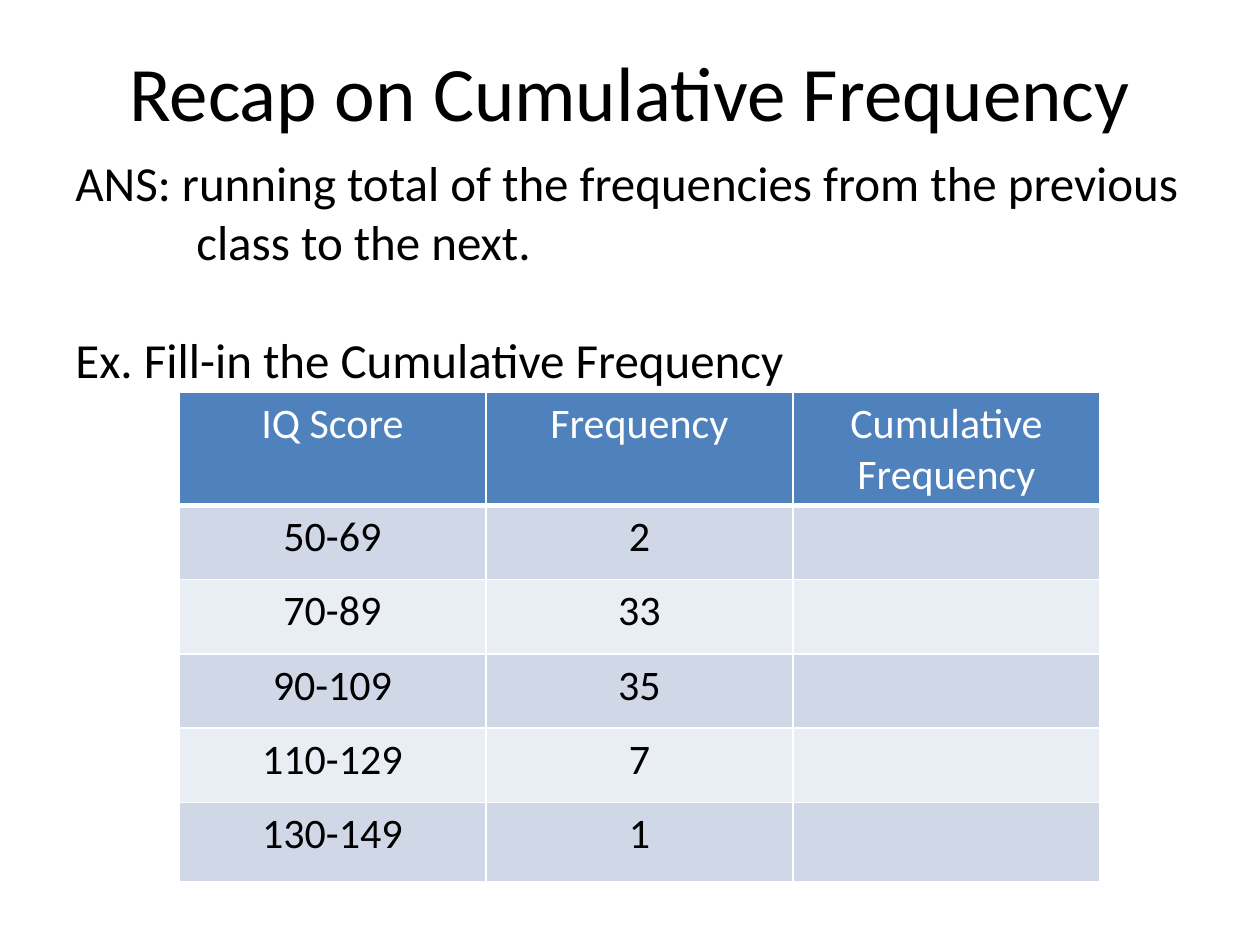
from pptx import Presentation
from pptx.dml.color import RGBColor
from pptx.enum.text import MSO_ANCHOR as Anchor, MSO_AUTO_SIZE as AutoSize, PP_ALIGN as Align
from pptx.oxml.ns import qn
from pptx.util import Inches, Pt
from lxml.etree import SubElement

COLORS = {"ink": "000000", "paper": "FFFFFF", "header": "4F81BD", "odd": "D0D8E8", "even": "E9EDF4"}
ROWS = [
    ("IQ Score", "Frequency", "Cumulative Frequency"),
    ("50-69", "2", ""),
    ("70-89", "33", ""),
    ("90-109", "35", ""),
    ("110-129", "7", ""),
    ("130-149", "1", ""),
]
HEIGHTS = [0.88, 0.59, 0.59, 0.59, 0.59, 0.63]
LINES = [
    ("ANS: running total of the frequencies from the previous", {}, 0),
    ("class to the next.", {}, 0.96),
    ("Ex. Fill-in the Cumulative Frequency", {"space_before": Pt(34)}, 0),
]


class SlideMaker:
    """Holds the text style and the current page, and draws its elements."""

    def __init__(self, page, font="Calibri"):
        self.page, self.font = page, font

    def apply(self, target, values):
        for name, value in values.items():
            setattr(target, name, value)

    def style(self, font, size, color):
        self.apply(font, {"name": self.font, "size": Pt(size), "bold": False})
        font.color.rgb = RGBColor.from_string(COLORS[color])

    def paragraph(self, para, words, size, color="ink", **layout):
        self.apply(para, layout)
        self.style(para.font, size, color)
        if words:
            span = para.add_run()
            span.text = words
            self.style(span.font, size, color)

    def text(self, place, lines, size, **frame_values):
        box = self.page.shapes.add_textbox(*map(Inches, place))
        frame = box.text_frame
        self.apply(frame, frame_values)
        for index, (words, layout, indent) in enumerate(lines):
            para = frame.add_paragraph() if index else frame.paragraphs[0]
            self.paragraph(para, words, size, **layout)
            if indent:
                props = para._p.get_or_add_pPr()
                props.set("marL", str(Inches(indent)))
                props.set("indent", "0")

    def borders(self, cell, widths):
        props = cell._tc.get_or_add_tcPr()
        for side, width in widths.items():
            line = SubElement(props, qn(f"a:ln{side}"), w=str(Pt(width)))
            fill = SubElement(line, qn("a:solidFill"))
            SubElement(fill, qn("a:srgbClr"), val=COLORS["paper"])

    def table(self, place, rows, heights):
        grid = self.page.shapes.add_table(len(rows), len(rows[0]), *map(Inches, place)).table
        for row, (values, height) in enumerate(zip(rows, heights)):
            grid.rows[row].height = Inches(height)
            band = ("odd" if row % 2 else "even") if row else "header"
            widths = {"L": 1, "R": 1, "B": 1} if row else {"L": 1, "R": 1, "T": 1, "B": 3}
            for column, words in enumerate(values):
                cell = grid.cell(row, column)
                self.borders(cell, widths)
                cell.fill.solid()
                cell.fill.fore_color.rgb = RGBColor.from_string(COLORS[band])
                para = cell.text_frame.paragraphs[0]
                self.paragraph(para, words, 24, "ink" if row else "paper", alignment=Align.CENTER)


def main():
    deck = Presentation()
    deck.slide_width, deck.slide_height = Inches(10), Inches(7.5)
    maker = SlideMaker(deck.slides.add_slide(deck.slide_layouts[6]))
    title = [("Recap on Cumulative Frequency", {"alignment": Align.CENTER}, 0)]
    maker.text((0.5, 0.25, 9, 0.94), title, 44, word_wrap=True, vertical_anchor=Anchor.MIDDLE)
    maker.table((1.42, 3.11, 7.31, 3.89), ROWS, HEIGHTS)
    maker.text((0.5, 1.16, 9.08, 1.99), LINES, 28, word_wrap=False, auto_size=AutoSize.SHAPE_TO_FIT_TEXT)
    deck.save("out.pptx")


if __name__ == "__main__":
    main()
